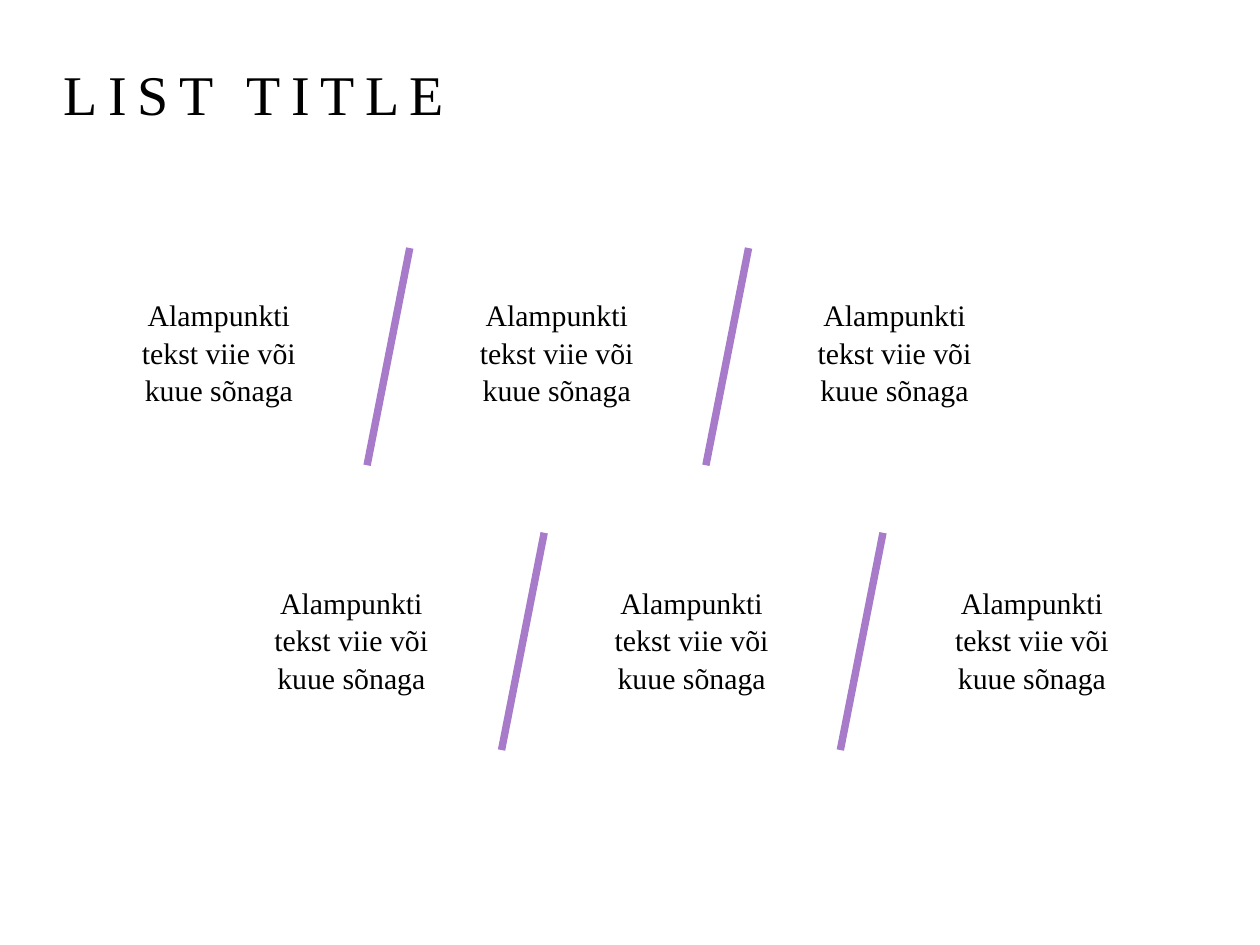
from lxml import etree
from pptx import Presentation
from pptx.dml.color import RGBColor
from pptx.enum.shapes import MSO_CONNECTOR
from pptx.enum.text import MSO_ANCHOR, MSO_AUTO_SIZE, PP_ALIGN
from pptx.oxml.ns import qn
from pptx.util import Cm, Pt

BLACK = RGBColor(0x00, 0x00, 0x00)
PURPLE = RGBColor(0xA7, 0x7B, 0xCA)
FONT = "Times New Roman"

ITEM_LINES = ["Alampunkti", "tekst viie või", "kuue sõnaga"]
ITEMS_PER_ROW = 3
ITEM_WIDTH, ITEM_HEIGHT = 4.17, 2.44
DIVIDER_PITCH, DIVIDER_LEAN, DIVIDER_HEIGHT = 6.83, 0.86, 4.38

# item left, item top, item pitch, divider right, divider top (cm)
ROWS = [
    (2.33, 5.87, 6.81, 8.26, 5.0),
    (5.0, 11.66, 6.86, 10.97, 10.74),
]


def add_text(slide, lines, left, top, width, height, *, size,
             align=PP_ALIGN.LEFT, anchor=MSO_ANCHOR.MIDDLE,
             auto_size=MSO_AUTO_SIZE.NONE, line_spacing=1.0, tracking=0):
    """Add one paragraph per line; lengths in cm, tracking in points."""
    box = slide.shapes.add_textbox(Cm(left), Cm(top), Cm(width), Cm(height))
    frame = box.text_frame
    frame.word_wrap = True
    frame.auto_size = auto_size
    frame.vertical_anchor = anchor
    for index, line in enumerate(lines):
        paragraph = frame.paragraphs[0] if index == 0 else frame.add_paragraph()
        paragraph.alignment = align
        paragraph.line_spacing = line_spacing
        run = paragraph.add_run()
        run.text = line
        run.font.name = FONT
        run.font.size = Pt(size)
        run.font.color.rgb = BLACK
        if tracking:
            run.font._element.set("spc", str(tracking * 100))


def add_divider(slide, right, top):
    """Add a slanted line from its upper right end."""
    divider = slide.shapes.add_connector(
        MSO_CONNECTOR.STRAIGHT, Cm(right), Cm(top),
        Cm(right - DIVIDER_LEAN), Cm(top + DIVIDER_HEIGHT))
    divider.line.color.rgb = PURPLE
    divider.line.width = Pt(4.25)
    etree.SubElement(divider._element.spPr, qn("a:effectLst"))


def add_row(slide, item_left, item_top, item_pitch, divider_right, divider_top):
    for index in range(ITEMS_PER_ROW - 1):
        add_divider(slide, divider_right + index * DIVIDER_PITCH, divider_top)
    for index in range(ITEMS_PER_ROW):
        add_text(slide, ITEM_LINES, item_left + index * item_pitch, item_top,
                 ITEM_WIDTH, ITEM_HEIGHT, size=17, align=PP_ALIGN.CENTER,
                 auto_size=MSO_AUTO_SIZE.SHAPE_TO_FIT_TEXT, line_spacing=1.05)


def main():
    presentation = Presentation()
    presentation.slide_width = Cm(25.4)
    presentation.slide_height = Cm(19.05)
    slide = presentation.slides.add_slide(presentation.slide_layouts[6])
    for row in ROWS:
        add_row(slide, *row)
    add_text(slide, ["LIST TITLE"], 1.04, -0.46, 23.24, 3.15, size=32,
             anchor=MSO_ANCHOR.BOTTOM, tracking=6)
    presentation.save("out.pptx")


if __name__ == "__main__":
    main()
